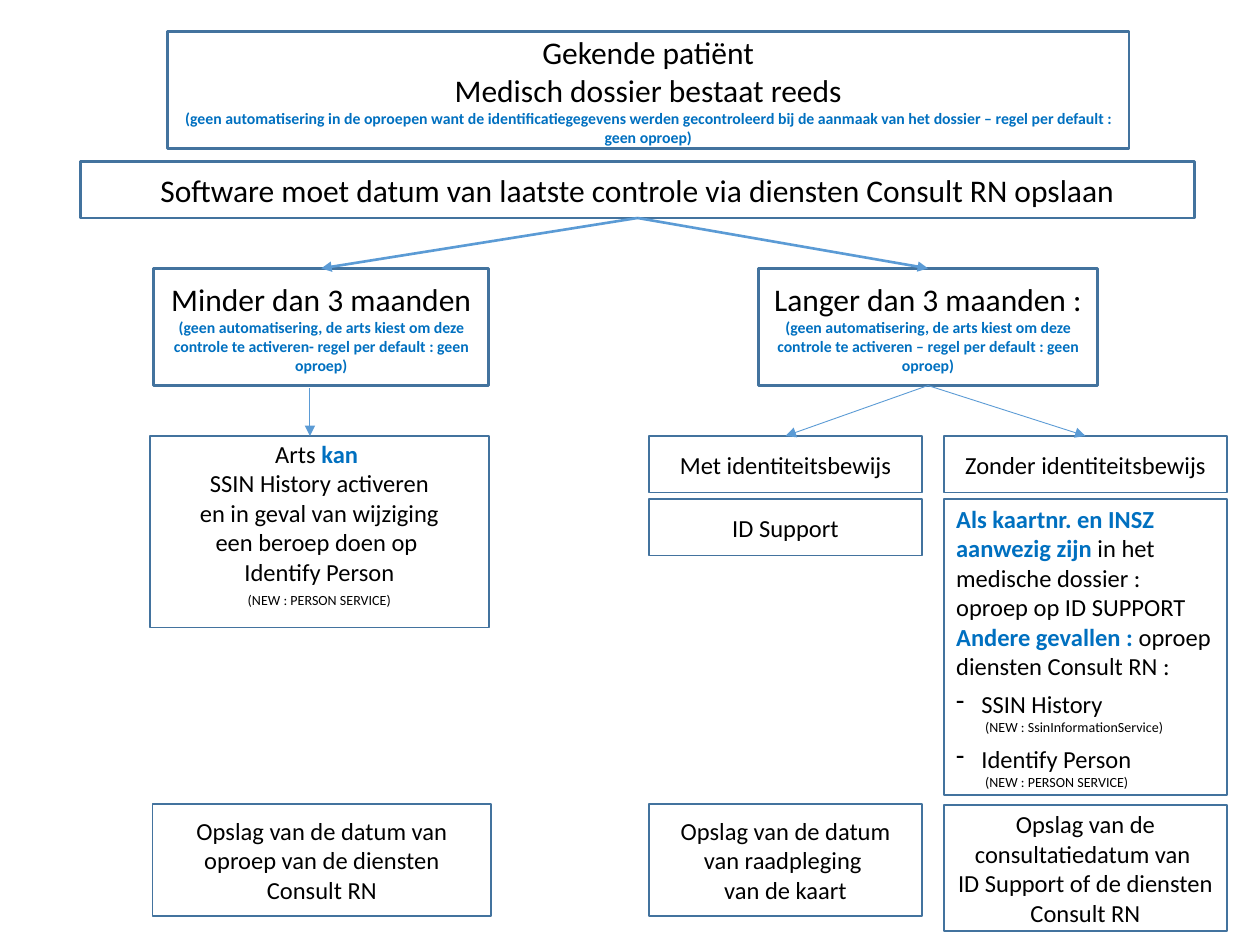
from lxml.etree import SubElement
from pptx import Presentation
from pptx.dml.color import RGBColor
from pptx.enum.shapes import MSO_CONNECTOR, MSO_SHAPE
from pptx.enum.text import MSO_ANCHOR, PP_ALIGN
from pptx.oxml.ns import qn
from pptx.util import Inches, Pt

COLORS = {"border": "43739E", "arrow": "5B9BD5", "text": "000000", "accent": "0070C0"}
FONT = "Calibri"
COLUMNS, ROWS = 100, 75
TOP, BOTTOM = 0, 2


def write(shape, text, size=14, color="text", bold=False, align=PP_ALIGN.CENTER,
          before=0, indent=0, bullet=None, joined=False):
    """Add text as a new paragraph, or to the last paragraph when joined."""
    frame = shape.text_frame
    paragraph = frame.paragraphs[-1]
    if not joined:
        if paragraph.runs:
            paragraph = frame.add_paragraph()
        paragraph.alignment = align
        paragraph.space_before = Pt(before)
        properties = paragraph._p.get_or_add_pPr()
        properties.set("marL", str(Inches(indent)))
        properties.set("indent", str(-Inches(indent) if bullet else 0))
        if bullet:
            SubElement(properties, qn("a:buChar")).set("char", bullet)
    run = paragraph.add_run()
    run.text = text
    run.font.name, run.font.size, run.font.bold = FONT, Pt(size), bold
    run.font.color.rgb = RGBColor.from_string(COLORS[color])


class FlowSlide:
    def __init__(self, presentation):
        self.slide = presentation.slides.add_slide(presentation.slide_layouts[6])
        self.column = presentation.slide_width / COLUMNS
        self.row = presentation.slide_height / ROWS

    def place(self, x, y):
        return round(x * self.column), round(y * self.row)

    def box(self, left, top, width, height, *lines, border=1, **style):
        shape = self.slide.shapes.add_shape(
            MSO_SHAPE.RECTANGLE, *self.place(left, top), *self.place(width, height))
        shape.shadow.inherit = False
        shape.fill.background()
        shape.line.color.rgb = RGBColor.from_string(COLORS["border"])
        shape.line.width = Pt(border)
        shape.text_frame.word_wrap = True
        shape.text_frame.vertical_anchor = MSO_ANCHOR.MIDDLE
        for line in lines:
            write(shape, line, **style)
        return shape

    def heading(self, left, top, width, height, *lines, remark=None):
        shape = self.box(left, top, width, height, *lines, border=1.5, size=18)
        if remark:
            write(shape, remark, size=9, color="accent", bold=True)
        return shape

    def arrow(self, start, end, width):
        connector = self.slide.shapes.add_connector(
            MSO_CONNECTOR.STRAIGHT, *self.place(*start), *self.place(*end))
        connector.line.color.rgb = RGBColor.from_string(COLORS["arrow"])
        connector.line.width = Pt(width)
        SubElement(connector.line._get_or_add_ln(), qn("a:tailEnd")).set("type", "triangle")
        SubElement(connector._element.spPr, qn("a:effectLst"))
        return connector

    def link(self, source, target, width):
        connector = self.arrow((0, 0), (1, 1), width)
        connector.begin_connect(source, BOTTOM)
        connector.end_connect(target, TOP)


def main():
    presentation = Presentation()
    presentation.slide_width, presentation.slide_height = Inches(10), Inches(7.5)
    flow = FlowSlide(presentation)

    # Starting point
    flow.heading(
        13.3, 2.5, 76.3, 9.3, "Gekende patiënt", "Medisch dossier bestaat reeds",
        remark="(geen automatisering in de oproepen want de identificatiegegevens werden "
               "gecontroleerd bij de aanmaak van het dossier – regel per default : geen oproep)")
    last_check = flow.heading(
        6.4, 12.8, 88.4, 4.5,
        "Software moet datum van laatste controle via diensten Consult RN opslaan")

    # Time since the last check
    recent = flow.heading(
        12.2, 21.3, 26.6, 9.3, "Minder dan 3 maanden",
        remark="(geen automatisering, de arts kiest om deze controle te activeren- "
               "regel per default : geen oproep)")
    older = flow.heading(
        60.2, 21.3, 26.9, 9.3, "Langer dan 3 maanden :",
        remark="(geen automatisering, de arts kiest om deze controle te activeren – "
               "regel per default : geen oproep)")

    # Recent check: optional calls
    optional = flow.box(11.9, 34.6, 26.9, 15.2, "Arts ")
    optional.text_frame.margin_bottom = Inches(0.18)
    write(optional, "kan ", color="accent", bold=True, joined=True)
    for line in ("SSIN History activeren", "en in geval van wijziging",
                 "een beroep doen op ", "Identify Person"):
        write(optional, line)
    write(optional, "(NEW : PERSON SERVICE)", size=8, before=3)

    # Older check: with or without proof of identity
    with_proof, without_proof = (51.5, 21.7), (74.9, 22.5)
    proofs = []
    for (left, width), label in ((with_proof, "Met identiteitsbewijs"),
                                 (without_proof, "Zonder identiteitsbewijs")):
        proofs.append(flow.box(left, 34.6, width, 4.5, label))
    flow.box(with_proof[0], 39.6, with_proof[1], 4.5, "ID Support")

    cases = flow.box(without_proof[0], 39.6, without_proof[1], 23.5)
    for condition, action in (
            ("Als kaartnr. en INSZ aanwezig zijn ",
             "in het medische dossier : oproep op ID SUPPORT"),
            ("Andere gevallen : ", "oproep diensten Consult RN :")):
        write(cases, condition, color="accent", bold=True, align=PP_ALIGN.LEFT)
        write(cases, action, joined=True)
    for service, successor in (("SSIN History", "(NEW : SsinInformationService)"),
                               ("Identify Person", "(NEW : PERSON SERVICE)")):
        write(cases, service, align=PP_ALIGN.LEFT, before=5, indent=0.2, bullet="-")
        write(cases, successor, size=8, align=PP_ALIGN.LEFT, indent=0.23)

    # Dates to store
    flow.box(12.1, 63.8, 26.9, 8.9,
             "Opslag van de datum van oproep van de diensten Consult RN")
    flow.box(with_proof[0], 63.8, with_proof[1], 8.9,
             "Opslag van de datum van raadpleging ", "van de kaart")
    flow.box(without_proof[0], 63.9, without_proof[1], 10,
             "Opslag van de consultatiedatum van ", "ID Support of de diensten Consult RN")

    # Arrows
    for period in (recent, older):
        flow.link(last_check, period, 1.5)
    for proof in proofs:
        flow.link(older, proof, 0.5)
    flow.arrow((24.6, 30.8), (24.6, 34.6), 0.5)

    presentation.save("out.pptx")


if __name__ == "__main__":
    main()
